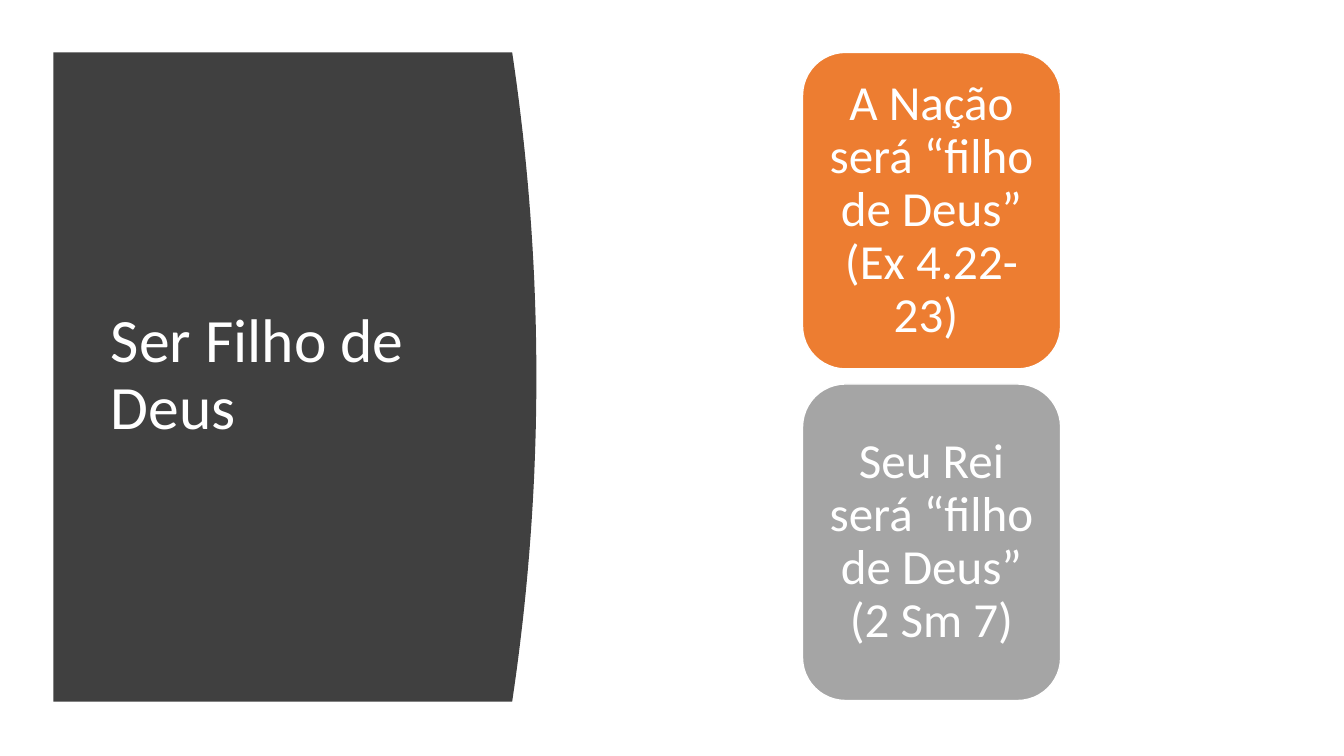
from dataclasses import dataclass

from pptx import Presentation
from pptx.dml.color import RGBColor as RGB
from pptx.enum.shapes import MSO_SHAPE as Shape
from pptx.enum.text import MSO_ANCHOR as Anchor, MSO_AUTO_SIZE as Fit, PP_ALIGN as Align
from pptx.util import Inches, Pt


@dataclass
class Theme:
    font: str = "Calibri"
    dark: str = "404040"
    white: str = "FFFFFF"
    orange: str = "ED7D31"
    grey: str = "A5A5A5"
    head: int = 44
    body: int = 35


theme = Theme()


def write(shape, text, size, align, pad):
    frame = shape.text_frame
    frame.text = text
    frame.word_wrap = True
    frame.auto_size = Fit.NONE
    frame.vertical_anchor = Anchor.MIDDLE
    frame.margin_left = frame.margin_right = Inches(pad)
    frame.margin_top = frame.margin_bottom = Inches(0.07)
    para = frame.paragraphs[0]
    para.alignment = align
    para.line_spacing = 0.9
    font = para.runs[0].font
    font.name = theme.font
    font.size = Pt(size)
    font.color.rgb = RGB.from_string(theme.white)


deck = Presentation()
deck.slide_width, deck.slide_height = Inches(13.33), Inches(7.5)
slide = deck.slides.add_slide(deck.slide_layouts[5])
title = slide.shapes.title

# Dark panel whose right edge bulges as a parabola
left, edge, bulge = 0.53, 5.08, 0.24
top, tall, steps = 0.52, 6.44, 40
curve = []
for i in range(steps + 1):
    t = 2 * i / steps - 1
    curve.append((Inches(edge + bulge * (1 - t * t)), Inches(top + tall * i / steps)))
pen = slide.shapes.build_freeform(Inches(left), Inches(top))
pen.add_line_segments(curve + [(Inches(left), Inches(top + tall))], close=True)
panel = pen.convert_to_shape()
panel.shadow.inherit = False
panel.fill.solid()
panel.fill.fore_color.rgb = RGB.from_string(theme.dark)
panel.line.fill.background()

# Title goes in front of the panel
panel.element.addnext(title.element)
title.left, title.top = Inches(0.94), Inches(1.11)
title.width, title.height = Inches(3.74), Inches(5.24)
write(title, "Ser Filho de Deus", theme.head, Align.LEFT, 0.16)

# Two stacked cards
cards = [
    ("A Nação será “filho de Deus” (Ex 4.22-23) ", theme.orange),
    ("Seu Rei será “filho de Deus” (2 Sm 7)", theme.grey),
]
high, gap = 3.14, 0.15
for row, (text, color) in enumerate(cards):
    card = slide.shapes.add_shape(
        Shape.ROUNDED_RECTANGLE, Inches(7.96), Inches(top + row * (high + gap)),
        Inches(2.56), Inches(high))
    card.shadow.inherit = False
    card.fill.solid()
    card.fill.fore_color.rgb = RGB.from_string(color)
    card.line.color.rgb = RGB.from_string(theme.white)
    card.line.width = Pt(1)
    write(card, text, theme.body, Align.CENTER, 0.13)

deck.save("out.pptx")
